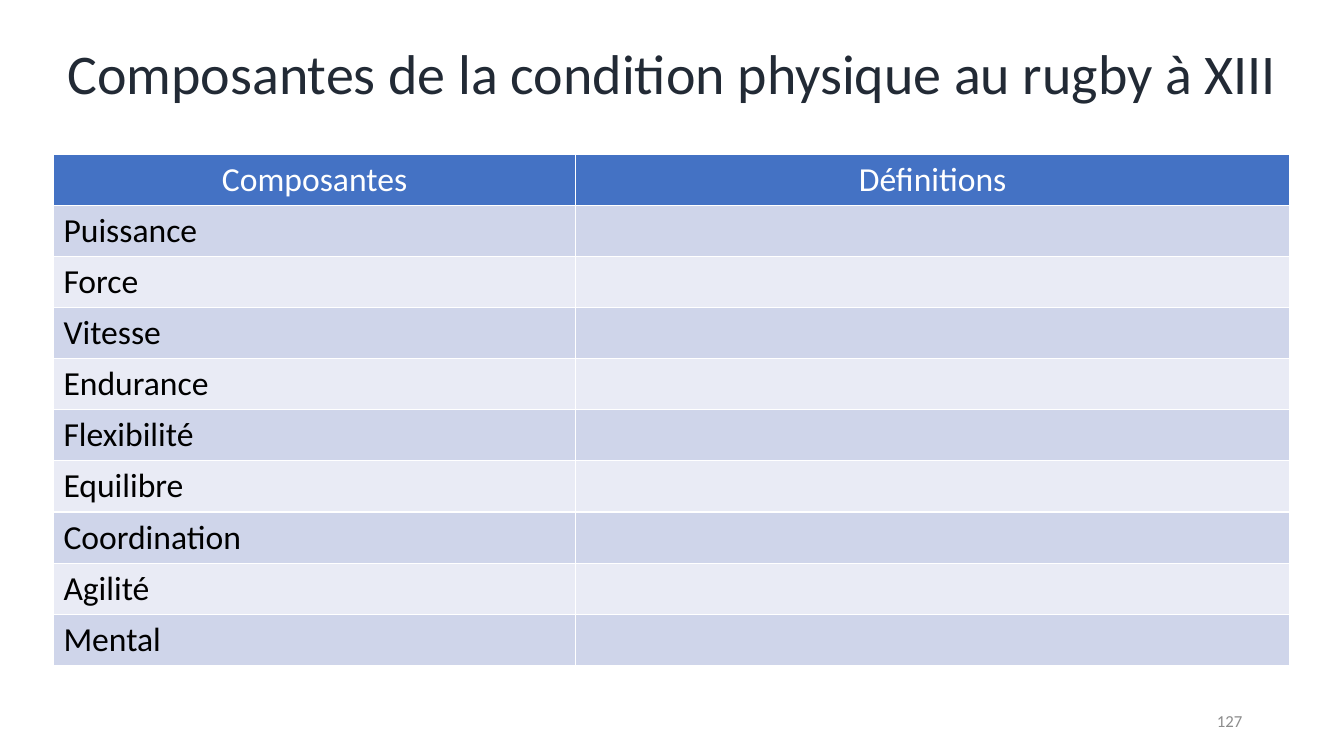
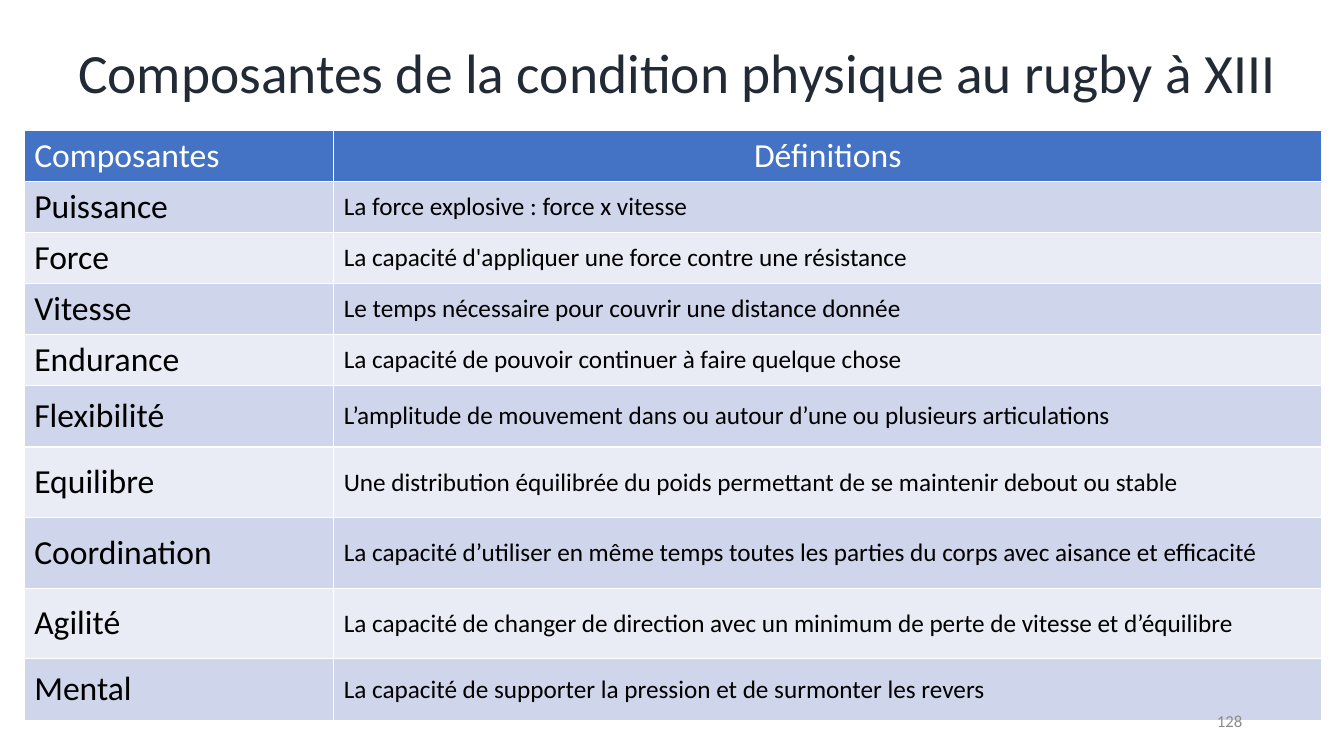
from dataclasses import dataclass

from lxml.etree import SubElement
from pptx import Presentation
from pptx.dml.color import RGBColor
from pptx.enum.text import MSO_ANCHOR, MSO_AUTO_SIZE, PP_ALIGN
from pptx.oxml.ns import qn
from pptx.util import Inches, Pt


@dataclass(frozen=True)
class Theme:
    font: str = "Calibri"
    title_color: str = "222A35"
    header_fill: str = "4472C4"
    band_fills: tuple = ("CFD5EA", "E9EBF5")
    white: str = "FFFFFF"
    black: str = "000000"
    number_color: str = "8C8C8C"
    label_size: float = 24
    definition_size: float = 18
    number_size: float = 12
    border_width: float = 1


THEME = Theme()
SLIDE_WIDTH, SLIDE_HEIGHT = 13.33, 7.5
TITLE_ONLY = 5
TITLE = "Composantes de la condition physique au rugby à XIII"
HEADERS = ("Composantes", "Définitions")
DEFINITIONS = {
    "Puissance": "La force explosive : force x vitesse",
    "Force": "La capacité d'appliquer une force contre une résistance",
    "Vitesse": "Le temps nécessaire pour couvrir une distance donnée",
    "Endurance": "La capacité de pouvoir continuer à faire quelque chose",
    "Flexibilité": "L’amplitude de mouvement dans ou autour d’une ou plusieurs articulations",
    "Equilibre": "Une distribution équilibrée du poids permettant de se maintenir debout ou stable",
    "Coordination": "La capacité d’utiliser en même temps toutes les parties du corps "
                    "avec aisance et efficacité",
    "Agilité": "La capacité de changer de direction avec un minimum de perte de vitesse "
               "et d’équilibre",
    "Mental": "La capacité de supporter la pression et de surmonter les revers",
}


def write(frame, text, size, color, align=PP_ALIGN.LEFT):
    """Put one formatted run in the frame's first paragraph and return the paragraph."""
    para = frame.paragraphs[0]
    para.alignment = align
    span = para.add_run()
    span.text = text
    span.font.name = THEME.font
    span.font.size = Pt(size)
    span.font.color.rgb = RGBColor.from_string(color)
    return para


def add_title(page, top, height, size, shift=0):
    """Centre the title on the slide, moved to the right by shift."""
    title = page.shapes.title
    title.left, title.top = Inches(shift), Inches(top)
    title.width, title.height = Inches(SLIDE_WIDTH), Inches(height)
    frame = title.text_frame
    frame.word_wrap = True
    frame.auto_size = MSO_AUTO_SIZE.NONE
    frame.vertical_anchor = MSO_ANCHOR.MIDDLE
    para = write(frame, TITLE, size, THEME.title_color, PP_ALIGN.CENTER)
    para.line_spacing = 0.9


def add_page_number(page, number):
    box = page.shapes.add_textbox(Inches(9.42), Inches(6.95), Inches(3), Inches(0.4))
    frame = box.text_frame
    frame.word_wrap = True
    frame.vertical_anchor = MSO_ANCHOR.MIDDLE
    write(frame, str(number), THEME.number_size, THEME.number_color, PP_ALIGN.RIGHT)


def set_borders(cell):
    properties = cell._tc.get_or_add_tcPr()
    for index, side in enumerate(("lnL", "lnR", "lnT", "lnB")):
        line = SubElement(properties, qn(f"a:{side}"), w=str(Pt(THEME.border_width)))
        fill = SubElement(line, qn("a:solidFill"))
        SubElement(fill, qn("a:srgbClr"), val=THEME.white)
        properties.insert(index, line)


def fill_cell(cell, text, fill, size, color, align=PP_ALIGN.LEFT):
    cell.vertical_anchor = MSO_ANCHOR.MIDDLE
    cell.fill.solid()
    cell.fill.fore_color.rgb = RGBColor.from_string(fill)
    set_borders(cell)
    if text:
        write(cell.text_frame, text, size, color, align)


def add_components_table(page, left, top, columns, rows, header_aligns, show_definitions):
    table = page.shapes.add_table(
        len(rows), len(columns), Inches(left), Inches(top),
        Inches(sum(columns)), Inches(sum(rows))).table
    for column, width in zip(table.columns, columns):
        column.width = Inches(width)
    for row, height in zip(table.rows, rows):
        row.height = Inches(height)
    for column, (header, align) in enumerate(zip(HEADERS, header_aligns)):
        fill_cell(table.cell(0, column), header, THEME.header_fill,
                  THEME.label_size, THEME.white, align)
    for row, (label, definition) in enumerate(DEFINITIONS.items(), start=1):
        band = THEME.band_fills[(row - 1) % 2]
        fill_cell(table.cell(row, 0), label, band, THEME.label_size, THEME.black)
        fill_cell(table.cell(row, 1), definition if show_definitions else "", band,
                  THEME.definition_size, THEME.black)


def add_page(deck):
    return deck.slides.add_slide(deck.slide_layouts[TITLE_ONLY])


def main():
    deck = Presentation()
    deck.slide_width, deck.slide_height = Inches(SLIDE_WIDTH), Inches(SLIDE_HEIGHT)

    question = add_page(deck)
    add_title(question, top=0.19, height=1.14, size=40)
    add_components_table(question, 0.53, 1.53, (5.18, 7.08), [0.5] * 10,
                         (PP_ALIGN.CENTER, PP_ALIGN.CENTER), show_definitions=False)
    add_page_number(question, 127)

    answer = add_page(deck)
    add_title(answer, top=0.27, height=0.95, size=39.6, shift=0.05)
    add_components_table(answer, 0.24, 1.29, (3.07, 9.8),
                         [0.5] * 5 + [0.61, 0.7, 0.7, 0.7, 0.61],
                         (PP_ALIGN.LEFT, PP_ALIGN.CENTER), show_definitions=True)
    add_page_number(answer, 128)

    deck.save("out.pptx")


if __name__ == "__main__":
    main()
